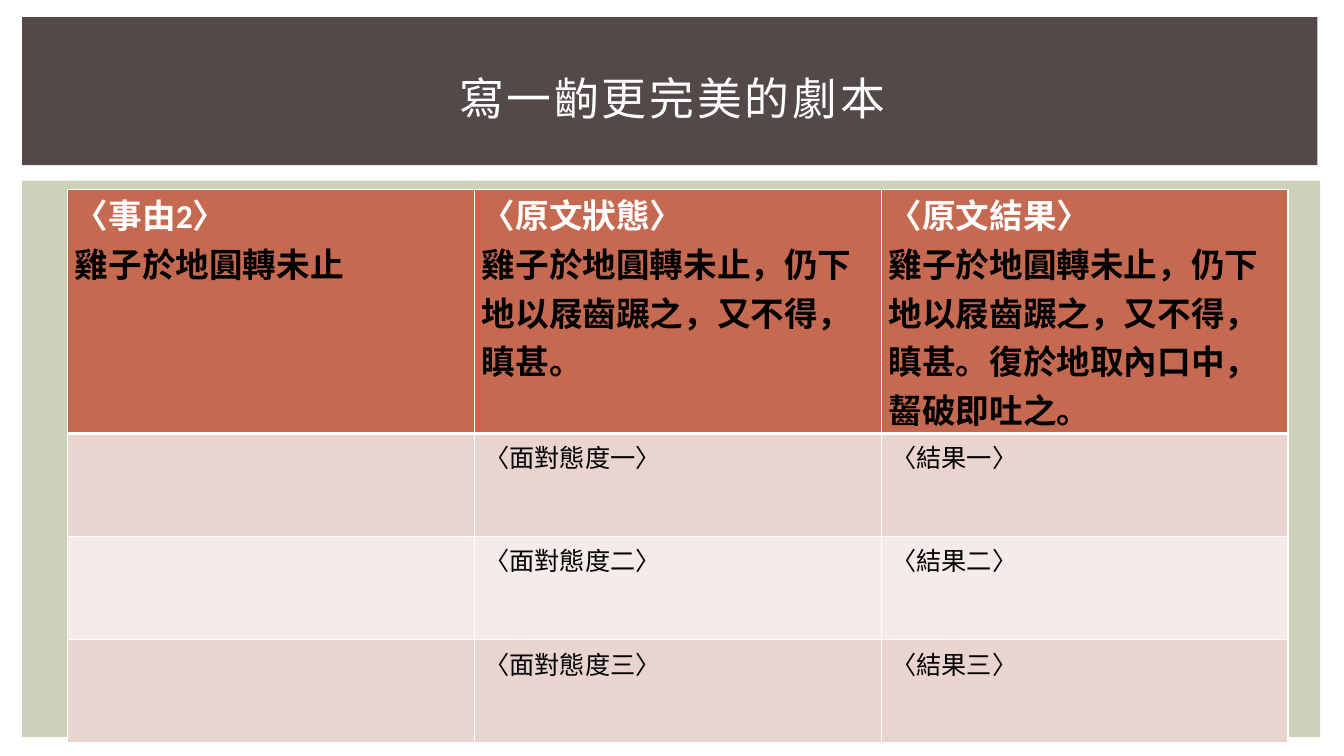
from lxml import etree
from pptx import Presentation
from pptx.dml.color import RGBColor
from pptx.enum.shapes import MSO_SHAPE
from pptx.enum.text import MSO_ANCHOR, PP_ALIGN
from pptx.oxml.ns import qn
from pptx.util import Cm, Pt

RECTANGLE = MSO_SHAPE.RECTANGLE
MIDDLE = MSO_ANCHOR.MIDDLE
CENTER = PP_ALIGN.CENTER
TITLE_ONLY = 5

WHITE, BLACK = "FFFFFF", "000000"
SAGE, BROWN = "CCD1B9", "534949"
HEADER_FILL = "C66951"
BAND_FILLS = ["EAD4D0", "F5EBE9"]

HEADERS = [
    ("〈事由2〉", "雞子於地圓轉未止"),
    ("〈原文狀態〉", "雞子於地圓轉未止，仍下地以屐齒蹍之，又不得，瞋甚。"),
    ("〈原文結果〉", "雞子於地圓轉未止，仍下地以屐齒蹍之，又不得，瞋甚。"
                "復於地取內口中，齧破即吐之。"),
]
NUMERALS = "一二三"


def color(value):
    return RGBColor.from_string(value)


def format_paragraph(paragraph, text, font_name, size, font_color, bold=False):
    paragraph.text = text
    font = paragraph.font
    font.name = font_name
    font.size = Pt(size)
    font.bold = bold
    font.color.rgb = color(font_color)


def add_panel(slide, left, top, width, height, fill):
    shape = slide.shapes.add_shape(RECTANGLE, Cm(left), Cm(top), Cm(width), Cm(height))
    shape.shadow.inherit = False
    shape.fill.solid()
    shape.fill.fore_color.rgb = color(fill)
    shape.line.fill.background()


def place_title(slide, text):
    title = slide.shapes.title
    title.left, title.top = Cm(1.42), Cm(0.99)
    title.width, title.height = Cm(31.04), Cm(2.92)
    title.text_frame.vertical_anchor = MIDDLE
    paragraph = title.text_frame.paragraphs[0]
    format_paragraph(paragraph, text, "Cabin", 32, WHITE)
    paragraph.alignment = CENTER
    # Letter spacing of two points
    paragraph.runs[0]._r.get_or_add_rPr().set("spc", "200")
    # Bring the title in front of the panels
    slide.shapes._spTree.append(title.element)


def style_cell(cell, fill, top_width, bottom_width):
    properties = cell._tc.get_or_add_tcPr()
    borders = {"lnL": 1, "lnR": 1, "lnT": top_width, "lnB": bottom_width}
    for tag, width in borders.items():
        line = etree.SubElement(properties, qn(f"a:{tag}"), w=str(Pt(width)))
        solid = etree.SubElement(line, qn("a:solidFill"))
        etree.SubElement(solid, qn("a:srgbClr"), val=WHITE)
    cell.fill.solid()
    cell.fill.fore_color.rgb = color(fill)


def fill_header(cell, label, passage):
    style_cell(cell, HEADER_FILL, 1, 3)
    cell.margin_left = cell.margin_right = Cm(0.19)
    cell.margin_top = cell.margin_bottom = 0
    frame = cell.text_frame
    format_paragraph(frame.paragraphs[0], label, "Calibri", 24, WHITE, True)
    format_paragraph(frame.add_paragraph(), passage, "Calibri", 24, BLACK, True)


def add_script_table(slide):
    frame = slide.shapes.add_table(len(NUMERALS) + 1, len(HEADERS),
                                   Cm(1.7), Cm(4.78), Cm(30.76), Cm(12.4))
    table = frame.table
    table.first_row = table.horz_banding = False
    table.rows[0].height = Cm(4.6)
    for column, (label, passage) in enumerate(HEADERS):
        fill_header(table.cell(0, column), label, passage)

    # Attitude and outcome rows, with the first column left for writing
    for row, numeral in enumerate(NUMERALS, start=1):
        table.rows[row].height = Cm(2.6)
        texts = ["", f"〈面對態度{numeral}〉", f"〈結果{numeral}〉"]
        for column, text in enumerate(texts):
            cell = table.cell(row, column)
            style_cell(cell, BAND_FILLS[(row - 1) % 2], 3 if row == 1 else 1, 1)
            if text:
                format_paragraph(cell.text_frame.paragraphs[0], text, "Cabin", 18, BLACK)


def main():
    presentation = Presentation()
    presentation.slide_width, presentation.slide_height = Cm(33.87), Cm(19.05)
    slide = presentation.slides.add_slide(presentation.slide_layouts[TITLE_ONLY])

    # Background panels
    add_panel(slide, 0.56, 4.55, 32.71, 14.02, SAGE)
    add_panel(slide, 0.56, 0.43, 32.64, 3.73, BROWN)

    # Content
    add_script_table(slide)
    place_title(slide, "寫一齣更完美的劇本")
    presentation.save("out.pptx")


if __name__ == "__main__":
    main()
